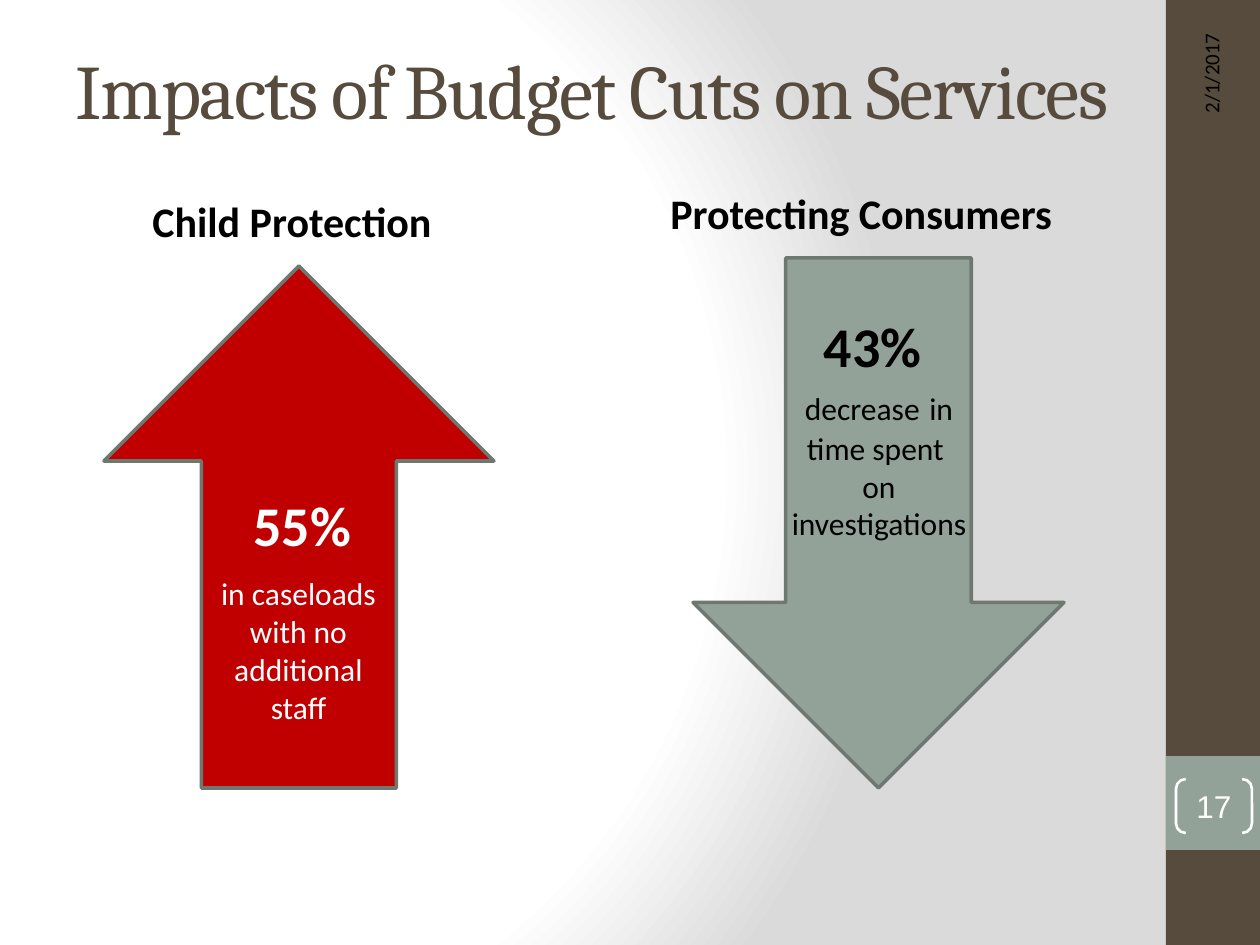
from lxml.etree import SubElement
from pptx import Presentation
from pptx.dml.color import RGBColor
from pptx.enum.shapes import MSO_SHAPE as Shape
from pptx.enum.text import MSO_ANCHOR as Anchor, PP_ALIGN as Align
from pptx.oxml.ns import qn
from pptx.util import Pt

EMU_PER_PX = 914400 / 126
BROWN, SAGE, RED = "564B3C", "93A299", "C00000"
EDGE, BLACK, WHITE, GREY = "6D7871", "000000", "FFFFFF", "DADADA"


def px(length):
    return round(length * EMU_PER_PX)


def color(hex_value):
    return RGBColor.from_string(hex_value)


class ImpactSlide:
    """Style and drawing methods for the current slide."""

    font = "Calibri"

    def __init__(self, deck):
        self.slide = deck.slides.add_slide(deck.slide_layouts[5])

    def background(self, stops, focus):
        fill = self.slide.background.fill
        fill.gradient()
        gradient = self.slide.element.find(".//" + qn("a:gradFill"))
        for child in list(gradient):
            gradient.remove(child)
        stop_list = SubElement(gradient, qn("a:gsLst"))
        for percent, shade in stops:
            stop = SubElement(stop_list, qn("a:gs"), pos=str(percent * 1000))
            SubElement(stop, qn("a:srgbClr"), val=shade)
        circle = SubElement(gradient, qn("a:path"), {"path": "circle"})
        sides = {side: str(percent * 1000) for side, percent in zip("ltrb", focus)}
        SubElement(circle, qn("a:fillToRect"), sides)

    def style(self, paragraph, size, shade, bold=False, align=Align.CENTER, font=None):
        paragraph.alignment = align
        face = paragraph.font
        face.name, face.size, face.bold = font or self.font, Pt(size), bold
        face.color.rgb = color(shade)

    def title(self, text, box):
        heading = self.slide.shapes.title
        heading.left, heading.top, heading.width, heading.height = map(px, box)
        frame = heading.text_frame
        frame.text, frame.vertical_anchor = text, Anchor.MIDDLE
        paragraph = frame.paragraphs[0]
        self.style(paragraph, 44, BROWN, font="Cambria")
        paragraph.runs[0].font._element.set("spc", "-100")

    def shape(self, kind, box, fill=None, line=None, width=2):
        shape = self.slide.shapes.add_shape(kind, *map(px, box))
        shape.shadow.inherit = False
        if fill:
            shape.fill.solid()
            shape.fill.fore_color.rgb = color(fill)
        else:
            shape.fill.background()
        if line:
            shape.line.color.rgb = color(line)
            shape.line.width = Pt(width)
        else:
            shape.line.fill.background()
        return shape

    def text(self, text, box, size, shade, bold=False, align=Align.CENTER):
        label = self.slide.shapes.add_textbox(*map(px, box))
        frame = label.text_frame
        frame.word_wrap, frame.text = True, text
        for paragraph in frame.paragraphs:
            self.style(paragraph, size, shade, bold, align)
        return label

    def date(self, text, box):
        label = self.text(text, box, 12, BLACK, align=Align.RIGHT)
        label.rotation = 270
        label.text_frame.vertical_anchor = Anchor.MIDDLE

    def page_number(self, text, box):
        bracket = self.shape(Shape.DOUBLE_BRACKET, box, line=WHITE, width=1.5)
        bracket.adjustments[0] = 0.18
        frame = bracket.text_frame
        frame.margin_left = frame.margin_right = frame.margin_top = frame.margin_bottom = 0
        frame.text, frame.vertical_anchor = text, Anchor.MIDDLE
        self.style(frame.paragraphs[0], 18, WHITE, font="Arial")


def main():
    deck = Presentation()
    deck.slide_width, deck.slide_height = px(1260), px(945)
    page = ImpactSlide(deck)

    page.background([(0, WHITE), (75, WHITE), (100, GREY)], (20, 50, 100, 50))
    page.shape(Shape.RECTANGLE, (1166, 0, 94, 945), BROWN)
    page.shape(Shape.RECTANGLE, (1166, 756, 94, 94), SAGE)
    page.date("2/1/2017", (1043, 164, 336, 50))
    page.page_number("17", (1176, 779, 76, 54))
    page.title("Impacts of Budget Cuts on Services", (25, 10, 1134, 158))

    page.text("Child Protection", (140, 189, 319, 63), 24, BLACK, True, Align.LEFT)
    page.text("Protecting Consumers", (658, 181, 410, 63), 24, BLACK, True, Align.LEFT)

    page.shape(Shape.UP_ARROW, (104, 266, 390, 522), RED, EDGE)
    page.text("in caseloads with no additional staff", (204, 568, 189, 165), 18, WHITE)
    page.text("55%", (241, 484, 130, 81), 32, WHITE, True, Align.LEFT)

    page.shape(Shape.DOWN_ARROW, (693, 258, 371, 530), SAGE, EDGE)
    decrease = page.text("43% \n\ntime spent \non\ninvestigations",
                         (766, 305, 226, 246), 18, BLACK)
    share, change = decrease.text_frame.paragraphs[:2]
    page.style(share, 32, BLACK, True)
    for word, size, bold in (("decrease", 18, False), (" ", 24, True), ("in", 18, False)):
        run = change.add_run()
        run.text, run.font.size, run.font.bold = word, Pt(size), bold
    deck.save("out.pptx")


if __name__ == "__main__":
    main()
